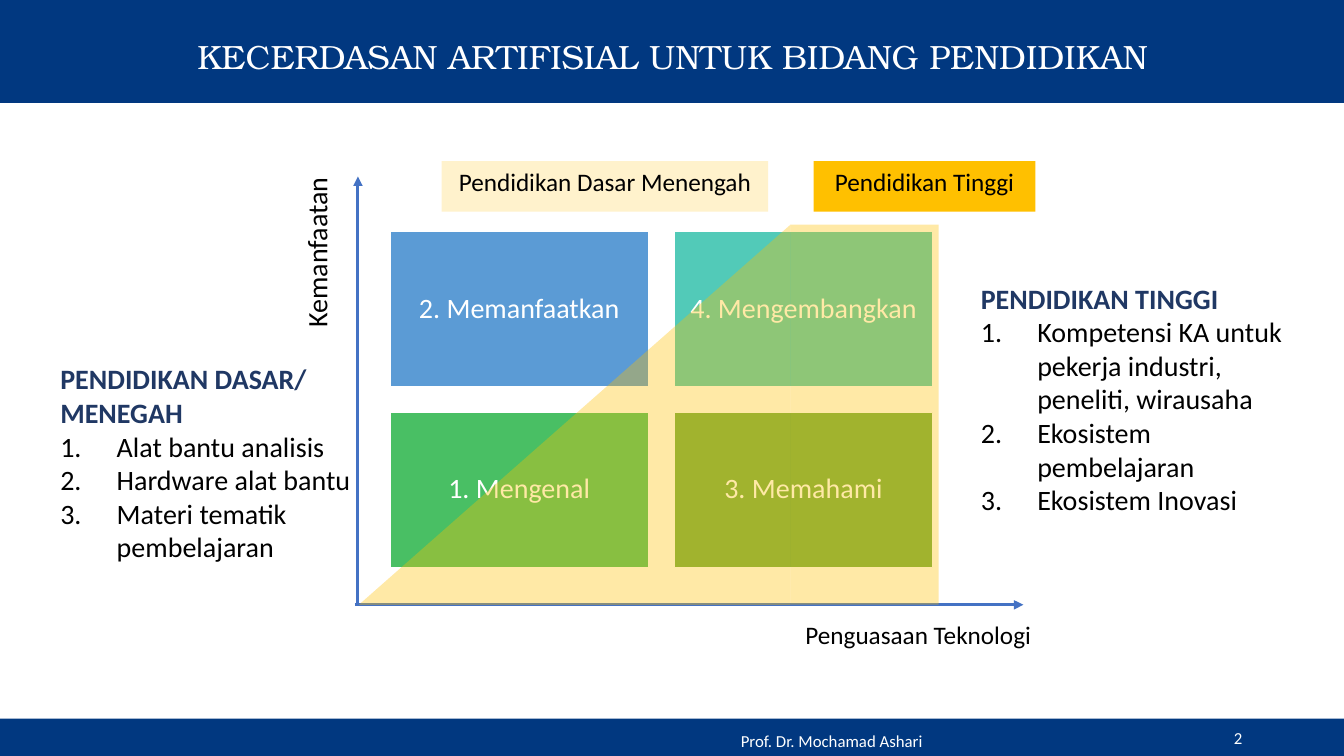
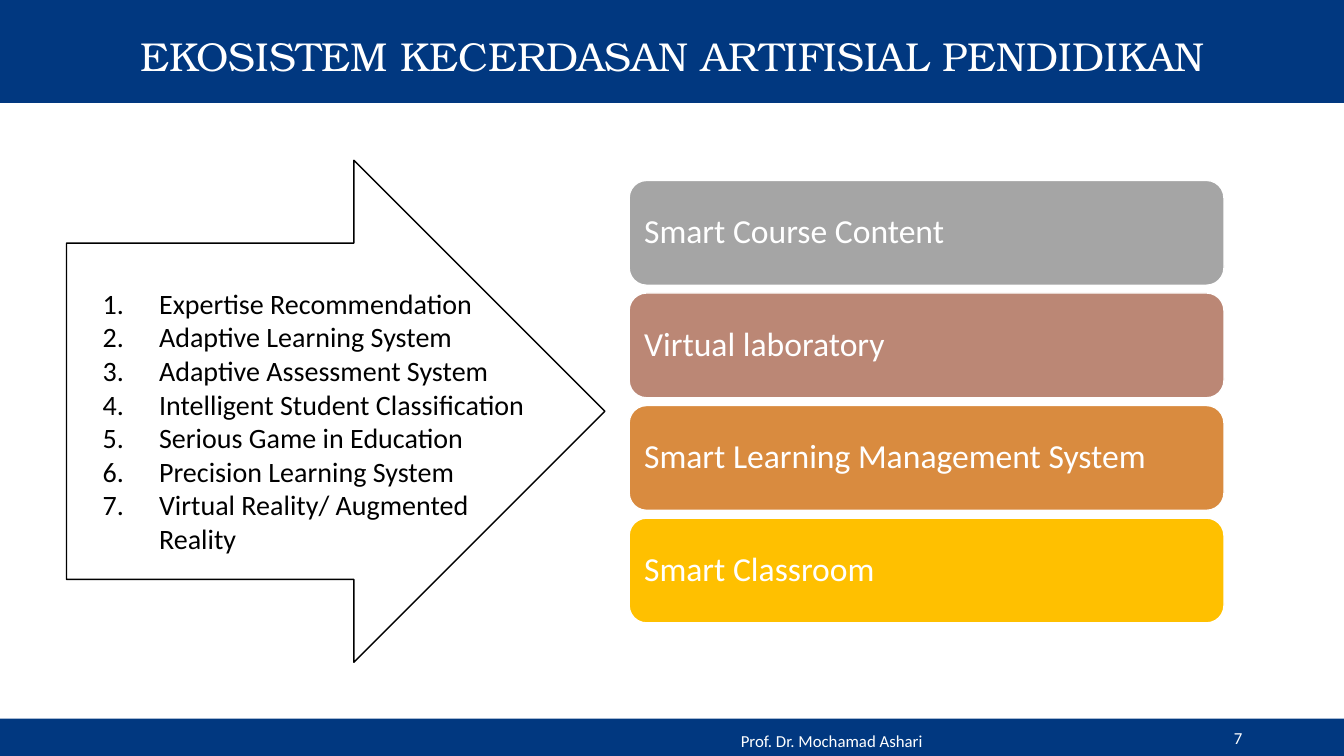
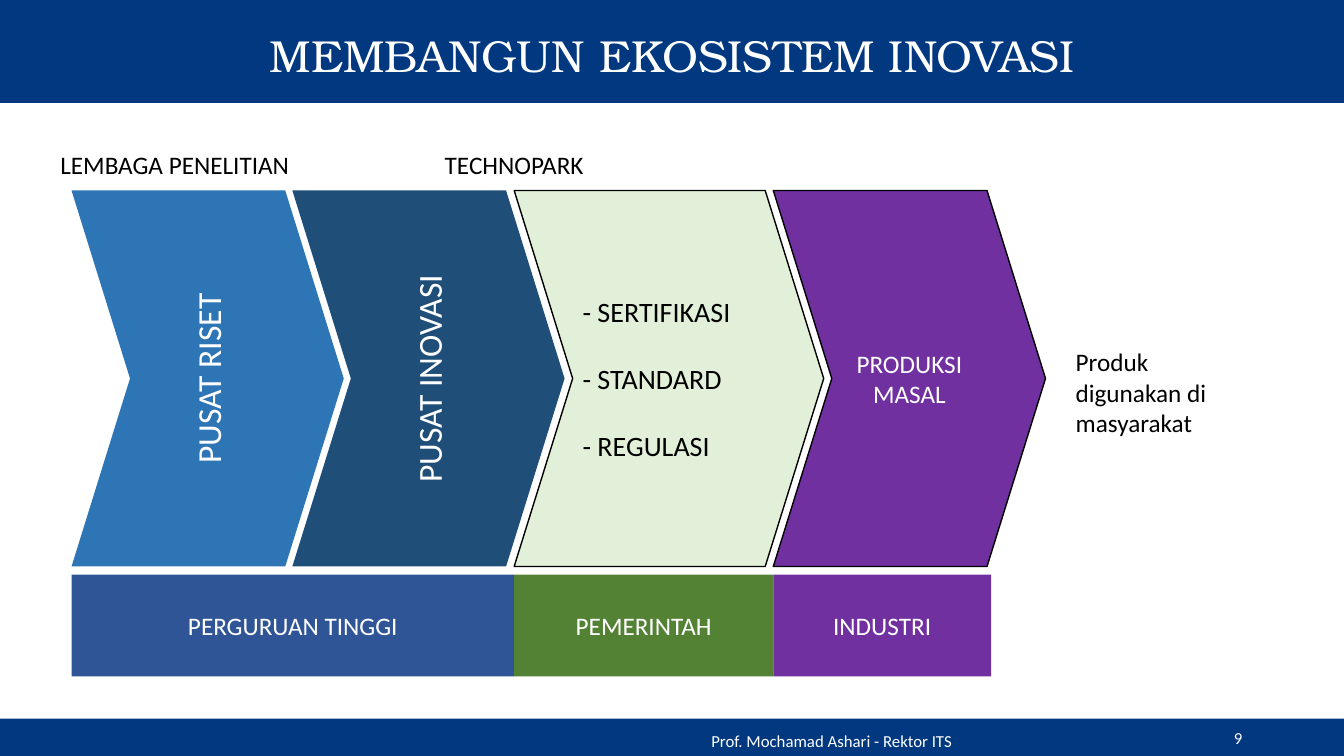
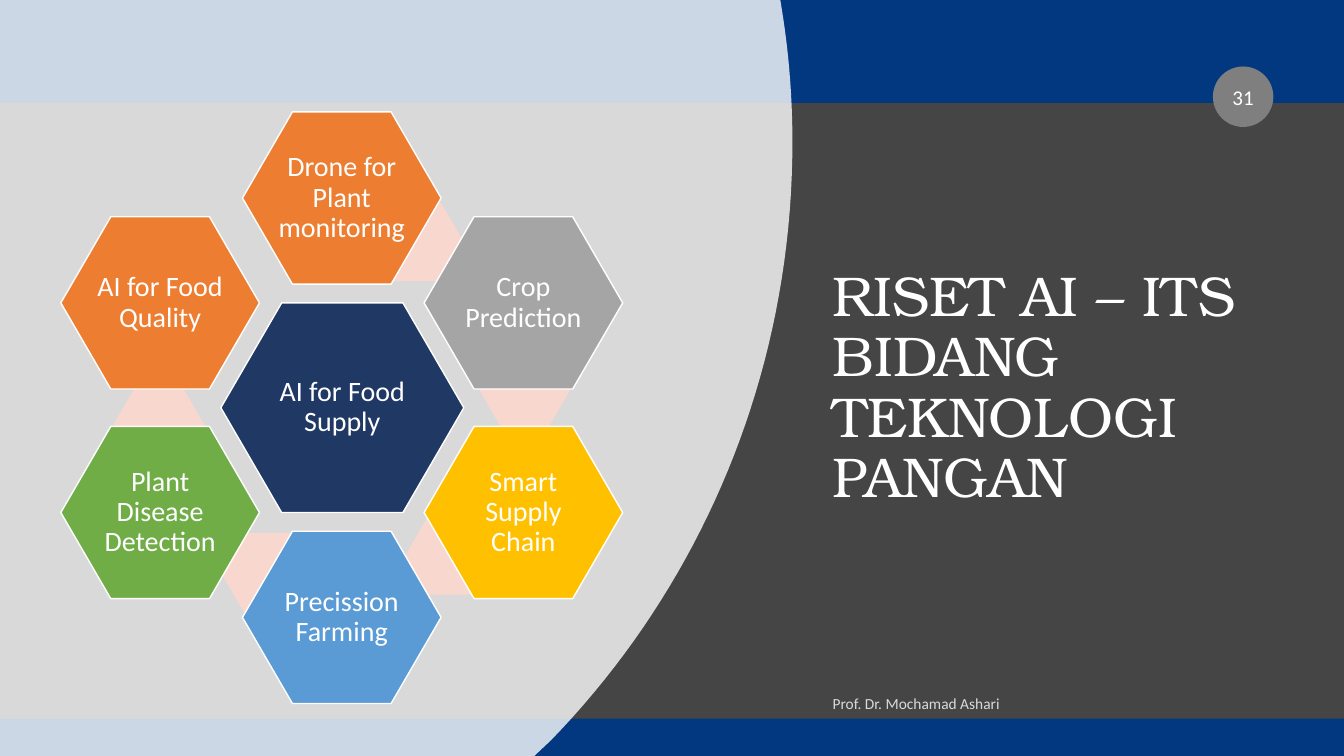
from collections import namedtuple
from math import cos, radians, sin

from lxml.etree import SubElement
from pptx import Presentation
from pptx.dml.color import RGBColor
from pptx.enum.shapes import MSO_CONNECTOR, MSO_SHAPE
from pptx.enum.text import MSO_ANCHOR, MSO_AUTO_SIZE, PP_ALIGN
from pptx.oxml.ns import qn
from pptx.util import Emu, Pt

PX = 9144
BODY_FONT = "Calibri"
TITLE_FONT = "TeX Gyre Bonum"
COLOURS = {
    "white": "FFFFFF", "black": "000000", "band": "013880", "dark": "454545",
    "navy": "203864", "axis": "4472C4", "sky": "5B9BD5", "teal": "52CAB8",
    "emerald": "49BF64", "green": "70AD47", "cream": "FFF2CC", "gold": "FFC000",
    "grey": "A5A5A5", "rose": "BB8775", "copper": "D98B3F", "research": "2E75B6",
    "innovation": "1F4E79", "mint": "E2F0D9", "purple": "7030A0",
    "campus": "2F5597", "state": "548235", "badge": "7F7F7F", "mist": "DADADA",
    "orange": "ED7D31", "blush": "F8D7CE",
}
ALIGN = {"left": PP_ALIGN.LEFT, "center": PP_ALIGN.CENTER, "right": PP_ALIGN.RIGHT}
ANCHOR = {"top": MSO_ANCHOR.TOP, "middle": MSO_ANCHOR.MIDDLE, "bottom": MSO_ANCHOR.BOTTOM}

Box = namedtuple("Box", "left top width height")


def px(value):
    return Emu(round(value * PX))


def emu(box):
    return [px(value) for value in box]


def within(box, left, top, width, height):
    return Box(box.left + left, box.top + top, width, height)


def rgb(name):
    return RGBColor.from_string(COLOURS[name])


def number_paragraph(para):
    properties = para._p.get_or_add_pPr()
    properties.set("marL", str(px(56)))
    properties.set("indent", str(px(-56)))
    SubElement(properties, qn("a:buFont")).set("typeface", "+mj-lt")
    SubElement(properties, qn("a:buAutoNum")).set("type", "arabicPeriod")


def write(frame, text, size=18, colour="black", font=BODY_FONT, bold=False,
          align="left", anchor="top", spacing=None, before=0, numbered=False,
          heading=None, inset=None, vertical=False):
    frame.word_wrap = True
    frame.auto_size = MSO_AUTO_SIZE.NONE
    frame.vertical_anchor = ANCHOR[anchor]
    if inset is not None:
        frame.margin_left = frame.margin_right = px(inset)
        frame.margin_top = frame.margin_bottom = px(inset)
    if vertical:
        frame._txBody.bodyPr.set("vert", "vert270")
    lines = ([heading] if heading else []) + text.split("\n")
    for index, line in enumerate(lines):
        para = frame.paragraphs[0] if index == 0 else frame.add_paragraph()
        is_heading = heading is not None and index == 0
        para.alignment = ALIGN[align]
        if spacing:
            para.line_spacing = spacing
        if index and before:
            para.space_before = Pt(before)
        if numbered and not is_heading:
            number_paragraph(para)
        span = para.add_run()
        span.text = line
        span.font.name = font
        span.font.size = Pt(size)
        span.font.bold = bold or is_heading
        span.font.color.rgb = rgb("navy" if is_heading else colour)


def add_text(page, box, text, **style):
    write(page.shapes.add_textbox(*emu(box)).text_frame, text, **style)


def paint(shape, fill=None, line=None, opacity=None):
    shape.shadow.inherit = False
    if fill:
        shape.fill.solid()
        shape.fill.fore_color.rgb = rgb(fill)
    else:
        shape.fill.background()
    if opacity:
        colour = shape.element.spPr.find(qn("a:solidFill")).find(qn("a:srgbClr"))
        SubElement(colour, qn("a:alpha")).set("val", str(opacity * 1000))
    if line:
        shape.line.color.rgb = rgb(line)
        shape.line.width = Pt(1)
    else:
        shape.line.fill.background()


def add_shape(page, kind, box, fill=None, line=None, opacity=None,
              adjust=(), text=None, **style):
    shape = page.shapes.add_shape(kind, *emu(box))
    paint(shape, fill, line, opacity)
    for index, value in enumerate(adjust):
        shape.adjustments[index] = value
    if text:
        write(shape.text_frame, text, **style)
    return shape


def add_axis(page, start, end):
    axis = page.shapes.add_connector(MSO_CONNECTOR.STRAIGHT, *emu(start + end))
    axis.line.color.rgb = rgb("axis")
    axis.line.width = Pt(2.25)
    SubElement(axis.line._get_or_add_ln(), qn("a:tailEnd")).set("type", "triangle")
    SubElement(axis.element.spPr, qn("a:effectLst"))


def add_bands(deck, page):
    tree = deck.slide_master.shapes.element
    bands = [Box(-4, 0, 1337, 102), Box(0, 713, 1333, 40)]
    for index, box in enumerate(bands):
        band = add_shape(page, MSO_SHAPE.RECTANGLE, box, "band")
        band.element.nvSpPr.cNvPr.set("id", str(100 + index))
        tree.insert(2 + index, band.element)


def set_title(page, box, text, **style):
    title = page.shapes.title
    title.left, title.top, title.width, title.height = emu(box)
    write(title.text_frame, text, colour="white", font=TITLE_FONT, spacing=0.9, **style)


def add_page(deck):
    return deck.slides.add_slide(deck.slide_layouts[5])


def add_banner_page(deck, title, size, footer, number):
    page = add_page(deck)
    if len(deck.slides) == 1:
        add_bands(deck, page)
    set_title(page, Box(92, 15, 1150, 86), title, size=size, align="center", anchor="middle")
    style = {"size": 12, "colour": "white", "anchor": "middle"}
    add_text(page, Box(600, 715, 450, 40), footer, align="center", **style)
    add_text(page, Box(942, 712, 300, 40), number, align="right", **style)
    return page


def draw_quadrants(page, box):
    cells = [("2. Memanfaatkan", "sky"), ("4. Mengembangkan", "teal"),
             ("1. Mengenal", "emerald"), ("3. Memahami", "green")]
    gap_x, gap_y = 26, 25
    width, height = (box.width - gap_x) / 2, (box.height - gap_y) / 2
    for index, (text, fill) in enumerate(cells):
        row, column = divmod(index, 2)
        cell = within(box, column * (width + gap_x), row * (height + gap_y), width, height)
        add_shape(page, MSO_SHAPE.RECTANGLE, cell, fill, "white", text=text, size=20,
                  colour="white", align="center", anchor="middle", spacing=0.9, inset=8)


def draw_matrix(page, box):
    floor = box.top + box.height
    draw_quadrants(page, within(box, 32, 55, 538, 333))
    add_axis(page, (box.left - 3, floor), (box.left + 660, floor))
    add_axis(page, (box.left, floor), (box.left, box.top))
    add_text(page, within(box, 434, 434, 317, 40), "Penguasaan Teknologi")
    add_text(page, within(box, -63, -33, 54, 193), "Kemanfaatan", size=20, vertical=True)
    for left, width, fill, text in [(83, 324, "cream", "Pendidikan Dasar Menengah"),
                                    (452, 220, "gold", "Pendidikan Tinggi")]:
        add_shape(page, MSO_SHAPE.RECTANGLE, within(box, left, -15, width, 50), fill,
                  text=text, align="center")
    ramp = add_shape(page, MSO_SHAPE.RIGHT_TRIANGLE, within(box, 1, 48, 428, 377),
                     "gold", opacity=35)
    ramp.element.spPr.find(qn("a:xfrm")).set("flipH", "1")
    add_shape(page, MSO_SHAPE.RECTANGLE, within(box, 429, 48, 147, 377), "gold", opacity=35)


def build_matrix_page(deck):
    page = add_banner_page(deck, "KECERDASAN ARTIFISIAL UNTUK BIDANG PENDIDIKAN", 24,
                           "Prof. Dr. Mochamad Ashari", "2")
    draw_matrix(page, Box(355, 175, 660, 425))
    add_text(page, Box(50, 354, 320, 212),
             "Alat bantu analisis\nHardware alat bantu\nMateri tematik pembelajaran",
             heading="PENDIDIKAN DASAR/ MENEGAH", size=20, numbered=True)
    add_text(page, Box(963, 274, 320, 246),
             "Kompetensi KA untuk pekerja industri, peneliti, wirausaha\n"
             "Ekosistem pembelajaran\nEkosistem Inovasi",
             heading="PENDIDIKAN TINGGI", size=20, numbered=True)


def draw_systems_arrow(page, box):
    add_text(page, within(box, 26, 120, 454, 279),
             "Expertise Recommendation\nAdaptive Learning System\n"
             "Adaptive Assessment System\nIntelligent Student Classification\n"
             "Serious Game in Education\nPrecision Learning System\n"
             "Virtual Reality/ Augmented Reality", size=20, numbered=True)
    add_shape(page, MSO_SHAPE.RIGHT_ARROW, box, line="black", adjust=(0.67, 0.5))


def draw_smart_stack(page, box):
    bars = [("Smart Course Content", "grey"), ("Virtual laboratory", "rose"),
            ("Smart Learning Management System", "copper"), ("Smart Classroom", "gold")]
    height = 104
    step = (box.height - height) / (len(bars) - 1)
    for index, (text, fill) in enumerate(bars):
        add_shape(page, MSO_SHAPE.ROUNDED_RECTANGLE,
                  within(box, 0, index * step, box.width, height), fill, "white",
                  text=text, size=24, colour="white", anchor="middle", spacing=0.9, inset=10)


def build_ecosystem_page(deck):
    page = add_banner_page(deck, "EKOSISTEM KECERDASAN ARTIFISIAL PENDIDIKAN", 28.8,
                           "Prof. Dr. Mochamad Ashari", "7")
    draw_smart_stack(page, Box(624, 179, 590, 439))
    draw_systems_arrow(page, Box(66, 159, 534, 498))


def draw_actors(page, box):
    left = 0
    for text, width, fill in [("PERGURUAN TINGGI", 439, "campus"),
                              ("PEMERINTAH", 257, "state"), ("INDUSTRI", 216, "purple")]:
        add_shape(page, MSO_SHAPE.RECTANGLE, within(box, left, 0, width, box.height), fill,
                  text=text, colour="white", align="center", anchor="middle")
        left += width


def draw_stages(page, box):
    upright = {"size": 24, "colour": "white", "align": "center", "vertical": True}
    stages = [
        (0, 270, "research", None, "PUSAT RISET", upright),
        (219, 270, "innovation", None, "PUSAT INOVASI", upright),
        (439, 307, "mint", "black", "- SERTIFIKASI\n- STANDARD\n- REGULASI",
         {"size": 20, "before": 24}),
        (696, 270, "purple", "black", "PRODUKSI MASAL", {"colour": "white", "align": "center"}),
    ]
    for left, width, fill, line, text, style in stages:
        add_shape(page, MSO_SHAPE.CHEVRON, within(box, left, 0, width, box.height), fill, line,
                  adjust=(58 / width,), text=text, anchor="middle", **style)
    add_text(page, within(box, -21, -46, 258, 40), "LEMBAGA PENELITIAN")
    add_text(page, within(box, 336, -46, 206, 40), "TECHNOPARK", align="center")
    add_text(page, within(box, 986, 150, 185, 101), "Produk digunakan di masyarakat")


def build_innovation_page(deck):
    page = add_banner_page(deck, "MEMBANGUN EKOSISTEM INOVASI", 32,
                           "Prof. Mochamad Ashari - Rektor ITS", "9")
    draw_actors(page, Box(71, 570, 912, 101))
    draw_stages(page, Box(71, 189, 966, 373))


def bezier(start, first, second, end, steps=40):
    for step in range(1, steps + 1):
        t = step / steps
        yield tuple((1 - t) ** 3 * a + 3 * (1 - t) ** 2 * t * b
                    + 3 * (1 - t) * t ** 2 * c + t ** 3 * d
                    for a, b, c, d in zip(start, first, second, end))


def draw_curved_panel(page, box):
    tip = (786, 141)
    outline = [(774, 0), (777, 19)]
    outline += bezier((777, 19), (783, 59), (786, 100), tip)
    outline += bezier(tip, (786, 372), (695, 581), (547, 734))
    outline += [(530, box.height), (0, box.height)]
    builder = page.shapes.build_freeform(px(box.left), px(box.top), scale=1.0)
    builder.add_line_segments([(px(box.left + x), px(box.top + y)) for x, y in outline])
    paint(builder.convert_to_shape(), "white", opacity=80)


def draw_hexagon(page, box, fill, text):
    add_shape(page, MSO_SHAPE.HEXAGON, box, fill, "white", adjust=(0.29,))
    label = within(box, box.width / 6, box.height / 6, box.width * 2 / 3, box.height * 2 / 3)
    add_text(page, label, text, size=20, colour="white", align="center", anchor="middle",
             spacing=0.9, inset=0)


def draw_honeycomb(page, box):
    width, height, radius = 197, 171, 208
    center_x, center_y = box.width / 2, box.height / 2
    draw_hexagon(page, within(box, center_x - 120, center_y - 104, 241, 208),
                 "navy", "AI for Food Supply")
    petals = [("Drone for Plant monitoring", "orange", (310, 90)),
              ("Crop Prediction", "grey", (416, 236)),
              ("Smart Supply Chain", "gold", (343, 401)),
              ("Precission Farming", "sky", (160, 418)),
              ("Plant Disease Detection", "green", (53, 272)),
              ("AI for Food Quality", "orange", None)]
    for index, (text, fill, link) in enumerate(petals):
        angle = radians(60 * index)
        if link:
            add_shape(page, MSO_SHAPE.HEXAGON, within(box, *link, 91, 78), "blush",
                      adjust=(0.29,))
        left = center_x + radius * sin(angle) - width / 2
        top = center_y - radius * cos(angle) - height / 2
        draw_hexagon(page, within(box, left, top, width, height), fill, text)


def build_food_page(deck):
    page = add_page(deck)
    page.background.fill.solid()
    page.background.fill.fore_color.rgb = rgb("dark")
    set_title(page, Box(816, 195, 447, 316), "RISET AI – ITS BIDANG TEKNOLOGI PANGAN",
              size=40, anchor="bottom")
    draw_curved_panel(page, Box(0, 0, 786, 750))
    add_shape(page, MSO_SHAPE.OVAL, Box(1203, 66, 60, 60), "badge", text="31", size=15,
              colour="white", align="center", anchor="middle", inset=0)
    add_text(page, Box(816, 678, 447, 40), "Prof. Dr. Mochamad Ashari", size=11,
             colour="mist", anchor="middle")
    draw_honeycomb(page, Box(59, 111, 560, 587))


def main():
    deck = Presentation()
    deck.slide_width, deck.slide_height = px(1333), px(750)
    for build in (build_matrix_page, build_ecosystem_page, build_innovation_page,
                  build_food_page):
        build(deck)
    deck.save("out.pptx")


if __name__ == "__main__":
    main()
